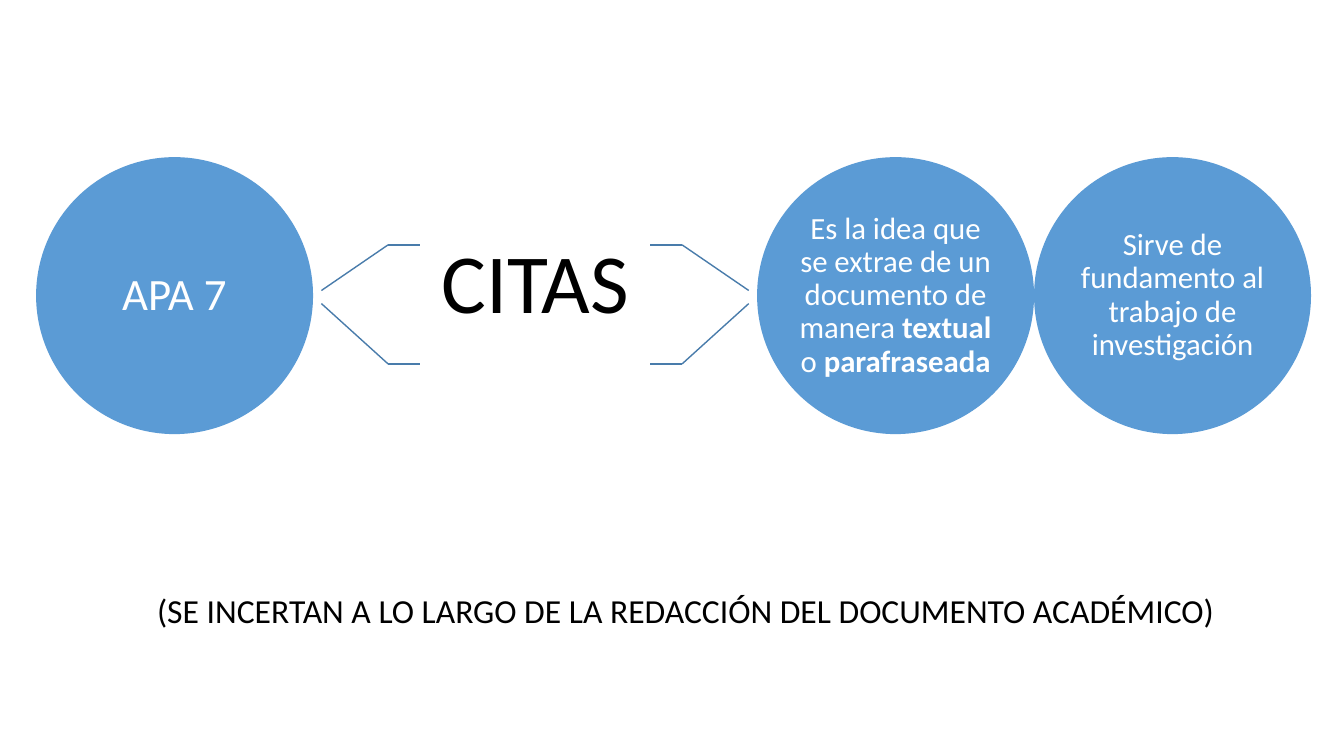
from pptx import Presentation
from pptx.dml.color import RGBColor
from pptx.enum.shapes import MSO_CONNECTOR, MSO_SHAPE
from pptx.enum.text import MSO_ANCHOR, MSO_AUTO_SIZE, PP_ALIGN
from pptx.oxml.ns import qn
from pptx.util import Cm, Pt

COLORS = {"circle": "5B9BD5", "line": "497CAB", "dark": "000000", "light": "FFFFFF"}
FONT = "Calibri"
TITLE = "CITAS"
NOTE = "(SE INCERTAN A LO LARGO DE LA REDACCIÓN DEL DOCUMENTO ACADÉMICO)"
CIRCLES = [
    (0.91, 32, [("APA 7", False)]),
    (19.08, 22, [
        ("Es la idea que se extrae de un documento de manera ", False),
        ("textual", True),
        (" o ", False),
        ("parafraseada", True),
    ]),
    (26.06, 22, [("Sirve de fundamento al trabajo de investigación", False)]),
]
CIRCLE_TOP, DIAMETER = 3.96, 6.98
TIP_X, BEND_X, END_X = 8.1, 9.78, 10.59
MIRROR = 26.97
ARMS = [(7.32, 6.17), (7.65, 9.17)]


def rgb(name):
    return RGBColor.from_string(COLORS[name])


def write(tf, parts, size, color, align=PP_ALIGN.CENTER, spacing=0.9):
    tf.word_wrap = True
    p = tf.paragraphs[0]
    p.alignment = align
    p.line_spacing = spacing
    for text, bold in parts:
        r = p.add_run()
        r.text = text
        r.font.name = FONT
        r.font.size = Pt(size)
        r.font.bold = bold
        r.font.color.rgb = rgb(color)


def center(tf):
    tf.auto_size = MSO_AUTO_SIZE.NONE
    tf.vertical_anchor = MSO_ANCHOR.MIDDLE
    tf.margin_left = tf.margin_right = tf.margin_top = tf.margin_bottom = 0


def add_circle(shapes, left, size, parts):
    sp = shapes.add_shape(MSO_SHAPE.OVAL, Cm(left), Cm(CIRCLE_TOP), Cm(DIAMETER), Cm(DIAMETER))
    sp.shadow.inherit = False
    sp.fill.solid()
    sp.fill.fore_color.rgb = rgb("circle")
    sp.line.fill.background()
    center(sp.text_frame)
    write(sp.text_frame, parts, size, "light")


def add_line(shapes, x1, y1, x2, y2):
    line = shapes.add_connector(MSO_CONNECTOR.STRAIGHT, Cm(x1), Cm(y1), Cm(x2), Cm(y2))
    line.line.color.rgb = rgb("line")
    line.line.width = Pt(1)
    spPr = line._element.spPr
    spPr.append(spPr.makeelement(qn("a:effectLst"), {}))


def main():
    prs = Presentation()
    prs.slide_width, prs.slide_height = Cm(33.87), Cm(19.05)
    slide = prs.slides.add_slide(prs.slide_layouts[5])
    shapes = slide.shapes

    title = shapes.title
    title.left, title.top = Cm(END_X), Cm(5.94)
    title.width, title.height = Cm(MIRROR - 2 * END_X), Cm(2.54)
    center(title.text_frame)
    write(title.text_frame, [(TITLE, False)], 60, "dark")

    for left, size, parts in CIRCLES:
        add_circle(shapes, left, size, parts)

    left_side = (TIP_X, BEND_X, END_X)
    right_side = [MIRROR - x for x in left_side]
    for tip_x, bend_x, end_x in (left_side, right_side):
        for tip_y, arm_y in ARMS:
            add_line(shapes, tip_x, tip_y, bend_x, arm_y)
            add_line(shapes, bend_x, arm_y, end_x, arm_y)

    note = shapes.add_textbox(Cm(3.71), Cm(14.73), Cm(27.38), Cm(1.27))
    write(note.text_frame, [(NOTE, False)], 24, "dark", PP_ALIGN.LEFT, 1.0)

    prs.save("out.pptx")


if __name__ == "__main__":
    main()
